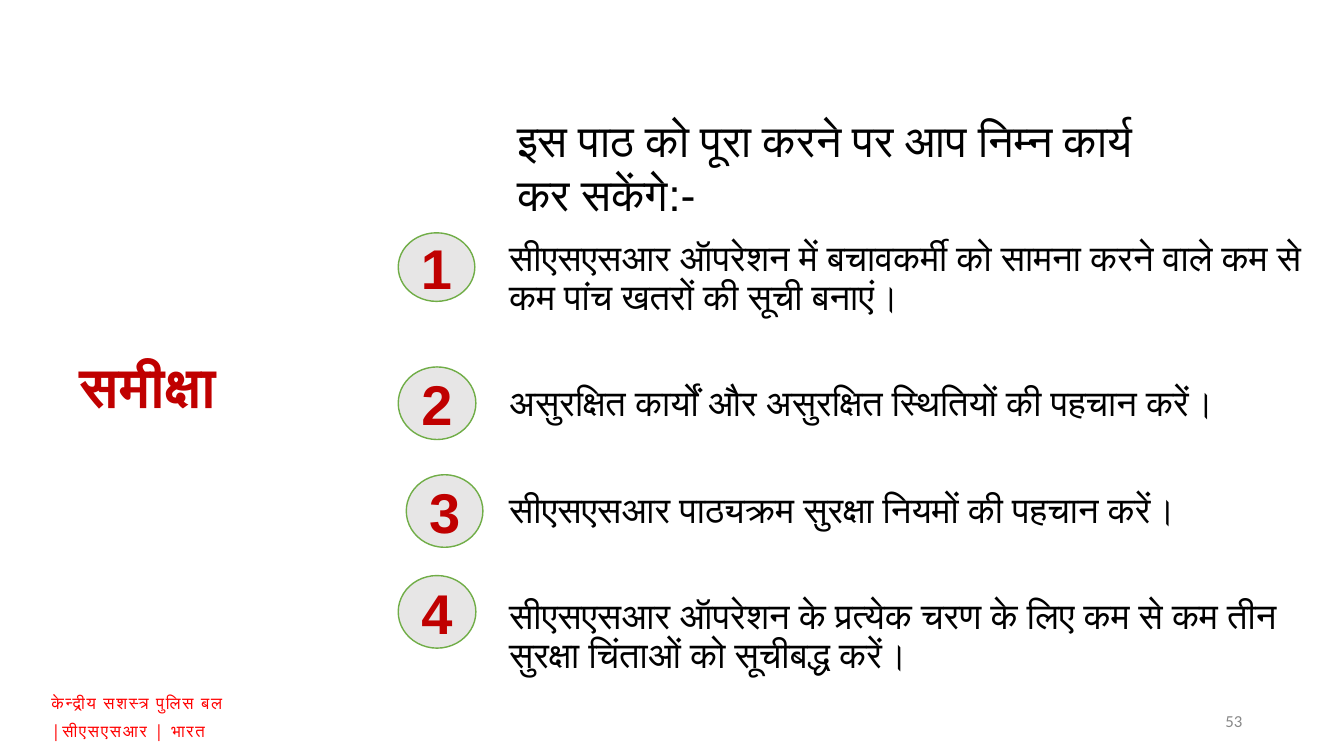
from dataclasses import dataclass

from lxml import etree
from pptx import Presentation
from pptx.dml.color import RGBColor
from pptx.enum.shapes import MSO_SHAPE
from pptx.enum.text import MSO_ANCHOR, MSO_AUTO_SIZE, PP_ALIGN
from pptx.oxml.ns import qn
from pptx.util import Inches, Pt

OVAL = MSO_SHAPE.OVAL
TOP, MIDDLE = MSO_ANCHOR.TOP, MSO_ANCHOR.MIDDLE
LEFT, CENTER, RIGHT = PP_ALIGN.LEFT, PP_ALIGN.CENTER, PP_ALIGN.RIGHT
NO_AUTOFIT = MSO_AUTO_SIZE.NONE

TITLE = "समीक्षा"
INTRO = "इस पाठ को पूरा करने पर आप निम्न कार्य कर सकेंगे:-"
OBJECTIVES = [
    "सीएसएसआर ऑपरेशन में बचावकर्मी को सामना करने वाले कम से कम पांच खतरों की सूची बनाएं।",
    "असुरक्षित कार्यों और असुरक्षित स्थितियों की पहचान करें।",
    "सीएसएसआर पाठ्यक्रम सुरक्षा नियमों की पहचान करें।",
    "सीएसएसआर ऑपरेशन के प्रत्येक चरण के लिए कम से कम तीन सुरक्षा चिंताओं को सूचीबद्ध करें।",
]
FOOTER = ["केन्द्रीय सशस्त्र पुलिस बल", "|सीएसएसआर | भारत"]
SLIDE_NUMBER = "53"
BADGES = [
    (3.95, 2.31, 0.76, 0.68),
    (3.95, 3.64, 0.77, 0.72),
    (4.03, 4.71, 0.76, 0.72),
    (3.95, 5.71, 0.77, 0.72),
]


@dataclass(frozen=True)
class Style:
    font: str
    size: float
    color: str
    bold: bool = False


@dataclass(frozen=True)
class Theme:
    title: Style = Style("Open Sans", 40, "C00000", True)
    intro: Style = Style("Arial", 32, "000000")
    objective: Style = Style("Open Sans", 25.9, "000000")
    badge: Style = Style("Arial", 40, "C00000", True)
    footer: Style = Style("Open Sans", 12, "FF0000")
    number: Style = Style("Calibri", 12, "888888")
    badge_fill: str = "E7E6E6"
    badge_line: str = "70AD47"


THEME = Theme()


def place(shape, box):
    shape.left, shape.top, shape.width, shape.height = map(Inches, box)


def write(shape, lines, style, align=LEFT, anchor=TOP, inset=(0.1, 0.05),
          line_spacing=1.0, gap=0):
    frame = shape.text_frame
    frame.word_wrap = True
    frame.auto_size = NO_AUTOFIT
    frame.vertical_anchor = anchor
    frame.margin_left = frame.margin_right = Inches(inset[0])
    frame.margin_top = frame.margin_bottom = Inches(inset[1])
    frame.text = "\n".join(lines)
    for index, paragraph in enumerate(frame.paragraphs):
        paragraph.alignment = align
        paragraph.line_spacing = line_spacing
        paragraph.space_before = Pt(gap if index else 0)
        properties = paragraph._p.get_or_add_pPr()
        properties.set("marL", "0")
        properties.set("indent", "0")
        etree.SubElement(properties, qn("a:buNone"))
        font = paragraph.font
        font.name = style.font
        font.size = Pt(style.size)
        font.bold = style.bold
        font.color.rgb = RGBColor.from_string(style.color)


def add_text(slide, box, lines, style, **options):
    shape = slide.shapes.add_textbox(*map(Inches, box))
    write(shape, lines, style, **options)
    return shape


def add_badge(slide, box, label):
    shape = slide.shapes.add_shape(OVAL, *map(Inches, box))
    shape.shadow.inherit = False
    shape.fill.solid()
    shape.fill.fore_color.rgb = RGBColor.from_string(THEME.badge_fill)
    shape.line.color.rgb = RGBColor.from_string(THEME.badge_line)
    shape.line.width = Pt(1)
    write(shape, [label], THEME.badge, align=CENTER, anchor=MIDDLE)


def main():
    presentation = Presentation()
    presentation.slide_width = Inches(13.33)
    presentation.slide_height = Inches(7.5)
    slide = presentation.slides.add_slide(presentation.slide_layouts[1])

    title, body = slide.shapes.title, slide.placeholders[1]
    place(title, (0.69, 3.39, 2.48, 0.95))
    write(title, [TITLE], THEME.title, anchor=MIDDLE, line_spacing=0.9)
    place(body, (4.95, 2.33, 8.22, 4.95))
    write(body, OBJECTIVES, THEME.objective, line_spacing=0.9, gap=48)

    add_text(slide, (5.03, 1.07, 6.7, 1.18), [INTRO], THEME.intro)
    for number, box in enumerate(BADGES, start=1):
        add_badge(slide, box, str(number))

    footer = add_text(slide, (0.42, 6.78, 2.34, 0.66), FOOTER, THEME.footer,
                      inset=(0.09, 0.09), gap=6)
    for paragraph in footer.text_frame.paragraphs:
        for run in paragraph.runs:
            run._r.get_or_add_rPr().set("spc", "120")
    add_text(slide, (9.42, 6.95, 3, 0.4), [SLIDE_NUMBER], THEME.number,
             align=RIGHT, anchor=MIDDLE)

    presentation.save("out.pptx")


if __name__ == "__main__":
    main()
